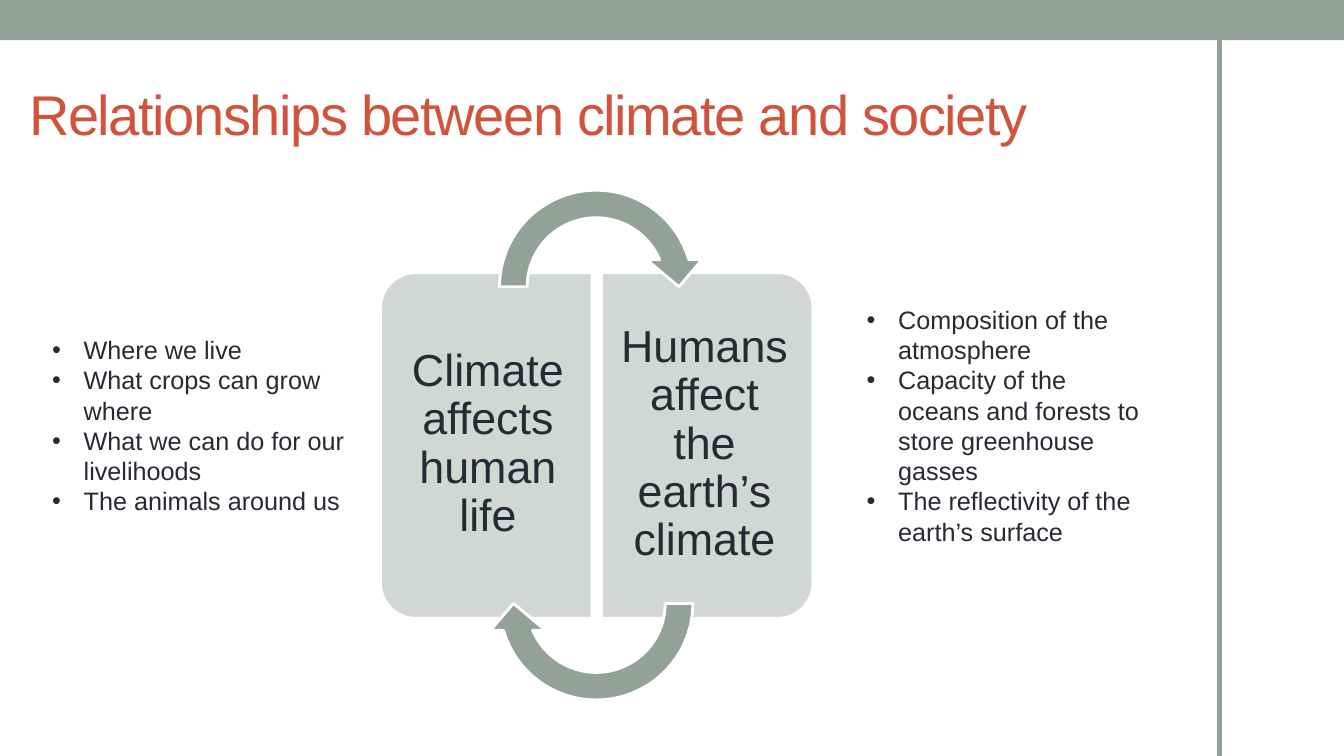
"""Build a slide on the two-way ties between climate and society."""
from dataclasses import dataclass

from lxml import etree
from pptx import Presentation
from pptx import util as u
from pptx.dml import color
from pptx.enum import shapes, text
from pptx.oxml import ns

Pt = u.Pt


@dataclass(frozen=True)
class Theme:
    """Hold the colours, font and type sizes of the slide."""
    sage: str = "93A299"
    pale: str = "D2D7D4"
    white: str = "FFFFFF"
    rust: str = "D2533C"
    ink: str = "292934"
    font: str = "Arial"
    title: int = 40
    label: int = 32
    body: int = 18


THEME = Theme()


def rgb(code):
    """Turn a hex code into a colour."""
    return color.RGBColor.from_string(code)


def add_form(slide, kind, box, fill, edge=None, turn=0):
    """Add a filled preset shape, with an optional white edge."""
    form = slide.shapes.add_shape(kind, *map(Pt, box))
    form.shadow.inherit = False
    form.fill.solid()
    form.fill.fore_color.rgb = rgb(fill)
    form.rotation = turn
    if edge:
        form.line.color.rgb = rgb(edge)
        form.line.width = Pt(2.08)
    else:
        form.line.fill.background()
    return form


def add_rule(slide, left, top, end):
    """Add the upright rule at the right."""
    rule = slide.shapes.add_connector(
        shapes.MSO_CONNECTOR.STRAIGHT, Pt(left), Pt(top), Pt(left), Pt(end))
    rule.line.color.rgb = rgb(THEME.sage)
    rule.line.width = Pt(3.25)
    etree.SubElement(rule._element.spPr, ns.qn("a:effectLst"))


def add_text(slide, box, words, size, tint, pads=(7.2, 3.6, 7.2, 3.6)):
    """Add a wrapped text box and return its frame."""
    frame = slide.shapes.add_textbox(*map(Pt, box)).text_frame
    frame.word_wrap = True
    (frame.margin_left, frame.margin_top,
     frame.margin_right, frame.margin_bottom) = map(Pt, pads)
    frame.text = words
    for para in frame.paragraphs:
        for run in para.runs:
            run.font.name = THEME.font
            run.font.size = Pt(size)
            run.font.color.rgb = rgb(tint)
    return frame


def add_title(slide, box, words):
    """Add the title with tight letter spacing."""
    frame = add_text(slide, box, words, THEME.title, THEME.rust)
    frame.vertical_anchor = text.MSO_ANCHOR.MIDDLE
    frame.paragraphs[0].runs[0].font._element.set("spc", "-100")


def add_label(slide, box, words, pads):
    """Add a centred label for one half of the panel."""
    frame = add_text(slide, box, words, THEME.label, THEME.ink, pads)
    frame.vertical_anchor = text.MSO_ANCHOR.MIDDLE
    para = frame.paragraphs[0]
    para.alignment = text.PP_ALIGN.CENTER
    para.line_spacing = 0.9


def add_list(slide, box, items):
    """Add a bulleted list."""
    frame = add_text(slide, box, "\n".join(items), THEME.body, THEME.ink)
    frame.auto_size = text.MSO_AUTO_SIZE.SHAPE_TO_FIT_TEXT
    for para in frame.paragraphs:
        props = para._p.get_or_add_pPr()
        props.set("marL", str(Pt(22.5)))
        props.set("indent", str(-Pt(22.5)))
        face = etree.SubElement(props, ns.qn("a:buFont"))
        face.set("typeface", THEME.font)
        etree.SubElement(props, ns.qn("a:buChar")).set("char", "•")


def add_cycle(slide):
    """Add the two halves, their labels and the arrows around them."""
    halves = (
        (223.9, 270, 279.4, "Climate affects human life", (9.4, 15.8, 14.4, 15.8)),
        (381.6, 90, 429.1, "Humans affect the earth’s climate", (14.4, 15.8, 9.4, 15.8)),
    )
    for left, turn, inset, words, pads in halves:
        add_form(slide, shapes.MSO_SHAPE.ROUND_2_SAME_RECTANGLE,
                 (left, 242.6, 247, 151.2), THEME.pale, THEME.white, turn)
        add_label(slide, (inset, 201.6, 143.3, 231.8), words, pads)
    for top, turn in ((126, 0), (352.1, 180)):
        add_form(slide, shapes.MSO_SHAPE.CIRCULAR_ARROW,
                 (347, top, 157.7, 157.7), THEME.sage, THEME.white, turn)


def main():
    """Build and save the slide."""
    deck = Presentation()
    deck.slide_width, deck.slide_height = Pt(960), Pt(540)
    slide = deck.slides.add_slide(deck.slide_layouts[6])
    add_form(slide, shapes.MSO_SHAPE.RECTANGLE, (0, 0, 960, 28.8), THEME.sage)
    add_rule(slide, 871.2, 27.4, 540)
    add_title(slide, (13.7, 41.8, 763.2, 77.8),
              "Relationships between climate and society")
    add_cycle(slide)
    add_list(slide, (30.2, 235.4, 234, 138.2), (
        "Where we live",
        "What crops can grow where",
        "What we can do for our livelihoods",
        "The animals around us",
    ))
    add_list(slide, (612, 213.8, 210.2, 181.4), (
        "Composition of the atmosphere",
        "Capacity of the oceans and forests to store greenhouse gasses",
        "The reflectivity of the earth’s surface",
    ))
    deck.save("out.pptx")


if __name__ == "__main__":
    main()
